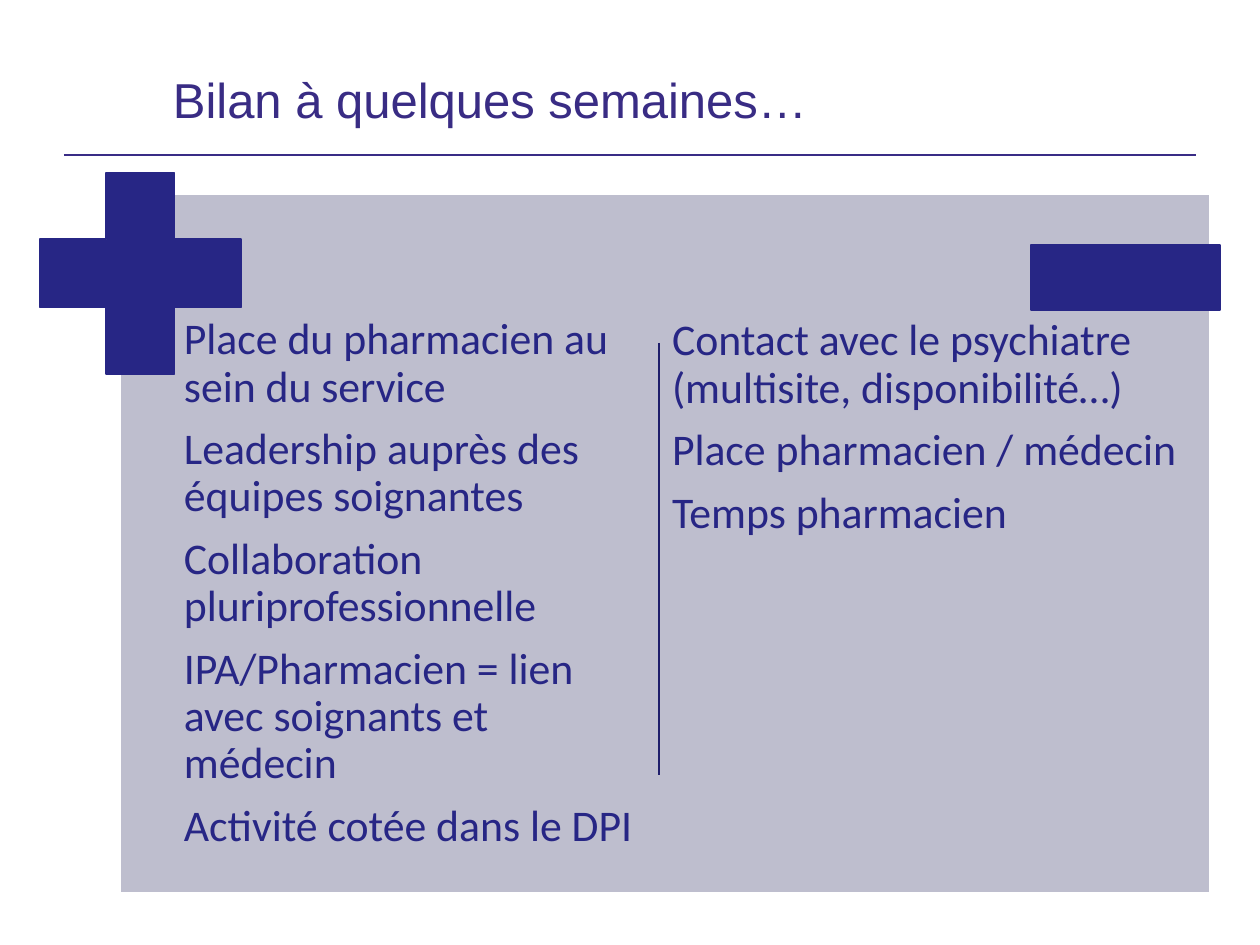
from pptx import Presentation
from pptx.dml.color import RGBColor
from pptx.enum.shapes import MSO_CONNECTOR, MSO_SHAPE
from pptx.enum.text import MSO_ANCHOR
from pptx.oxml.ns import qn
from pptx.util import Emu, Pt

RECT = MSO_SHAPE.RECTANGLE
CROSS = MSO_SHAPE.CROSS
LINE = MSO_CONNECTOR.STRAIGHT
TOP = MSO_ANCHOR.TOP
MIDDLE = MSO_ANCHOR.MIDDLE

NAVY = RGBColor(0x27, 0x26, 0x85)
DARK = RGBColor(0x1F, 0x1E, 0x6B)
VIOLET = RGBColor(0x39, 0x2C, 0x84)
RULE = RGBColor(0x39, 0x2C, 0x86)
GREY = RGBColor(0xBE, 0xBE, 0xCE)
WHITE = RGBColor(0xFF, 0xFF, 0xFF)

TITLE = "Bilan à quelques semaines…"
PROS = [
    "Place du pharmacien au sein du service",
    "Leadership auprès des équipes soignantes",
    "Collaboration pluriprofessionnelle",
    "IPA/Pharmacien = lien avec soignants et médecin",
    "Activité cotée dans le DPI",
]
CONS = [
    "Contact avec le psychiatre (multisite, disponibilité…)",
    "Place pharmacien / médecin",
    "Temps pharmacien",
]


def px(n):
    return Emu(round(n * 914400 / 126))


def add_text(slide, box, lines, size=25, font="Calibri", color=NAVY,
             anchor=TOP, inset=6, after=8.75):
    frame = slide.shapes.add_textbox(*map(px, box)).text_frame
    frame.word_wrap = True
    frame.vertical_anchor = anchor
    frame.margin_left = frame.margin_right = px(inset)
    frame.margin_top = frame.margin_bottom = px(6)
    for i, line in enumerate(lines):
        para = frame.paragraphs[0] if i == 0 else frame.add_paragraph()
        para.line_spacing = 0.9
        para.space_after = Pt(after)
        run = para.add_run()
        run.text = line
        run.font.size = Pt(size)
        run.font.name = font
        run.font.color.rgb = color


def add_block(slide, kind, box, fill, edge):
    shape = slide.shapes.add_shape(kind, *map(px, box))
    shape.shadow.inherit = False
    shape.fill.solid()
    shape.fill.fore_color.rgb = fill
    shape.line.color.rgb = edge
    shape.line.width = Pt(1)
    return shape


def add_line(slide, ends, color):
    line = slide.shapes.add_connector(LINE, *map(px, ends))
    line.line.color.rgb = color
    line.line.width = Pt(1)
    props = line._element.spPr
    props.append(props.makeelement(qn("a:effectLst"), {}))


def main():
    prs = Presentation()
    prs.slide_width, prs.slide_height = px(1260), px(945)
    slide = prs.slides.add_slide(prs.slide_layouts[6])

    # Title and its rule
    add_line(slide, (64, 155, 1196, 155), RULE)
    add_text(slide, (160, 50, 1036, 105), [TITLE], size=28, font="Arial",
             color=VIOLET, anchor=MIDDLE, inset=13, after=0)

    # Panel with the pros and cons
    add_block(slide, RECT, (120, 194, 1090, 699), GREY, WHITE)
    add_text(slide, (178, 311, 476, 583), PROS)
    add_text(slide, (666, 312, 549, 522), CONS)

    # Plus and minus signs
    plus = add_block(slide, CROSS, (40, 173, 201, 201), NAVY, NAVY)
    plus.adjustments[0] = 0.33
    add_block(slide, RECT, (1031, 245, 189, 65), NAVY, NAVY)

    # Divider between the columns
    add_line(slide, (659, 343, 659, 775), DARK)

    prs.save("out.pptx")


if __name__ == "__main__":
    main()
